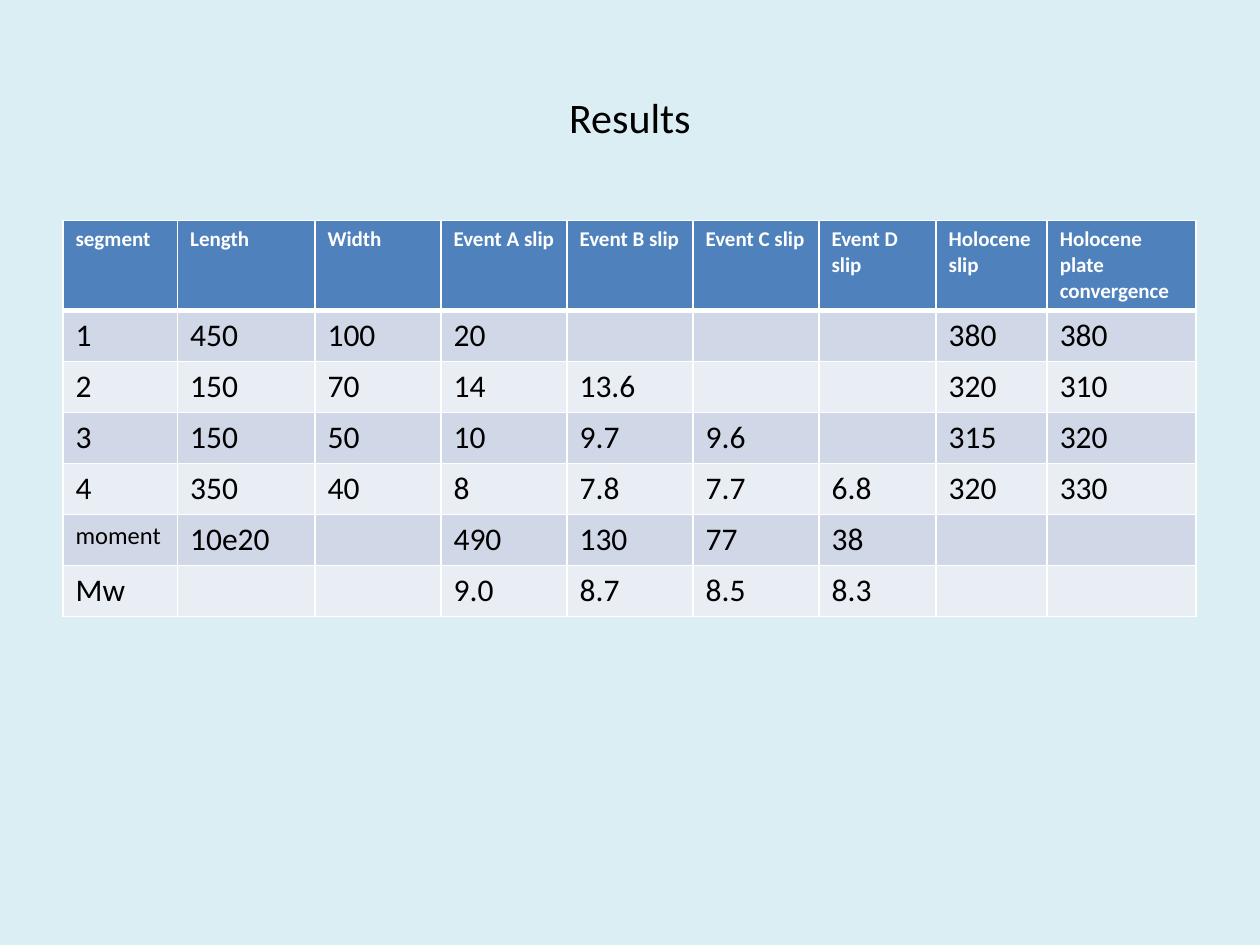
"""Build a slide with a table of slip results for each fault segment."""
import pptx
import pptx.dml.color
import pptx.enum.text
import pptx.oxml
import pptx.oxml.ns
import pptx.util

Cm = pptx.util.Cm
Pt = pptx.util.Pt
RGBColor = pptx.dml.color.RGBColor

PALE = RGBColor(0xDB, 0xEE, 0xF4)
BLUE = RGBColor(0x4F, 0x81, 0xBD)
BANDS = (RGBColor(0xD0, 0xD8, 0xE8), RGBColor(0xE9, 0xED, 0xF4))
WHITE = RGBColor(0xFF, 0xFF, 0xFF)
BLACK = RGBColor(0x00, 0x00, 0x00)

WIDTHS = (2.31, 2.77, 2.54, 2.54, 2.54, 2.54, 2.36, 2.24, 3)
HEAD = ("segment", "Length", "Width", "Event A slip", "Event B slip",
        "Event C slip", "Event D slip", "Holocene slip",
        "Holocene plate convergence")
ROWS = (
    ("1", "450", "100", "20", "", "", "", "380", "380"),
    ("2", "150", "70", "14", "13.6", "", "", "320", "310"),
    ("3", "150", "50", "10", "9.7", "9.6", "", "315", "320"),
    ("4", "350", "40", "8", "7.8", "7.7", "6.8", "320", "330"),
    ("moment", "10e20", "", "490", "130", "77", "38", "", ""),
    ("Mw", "", "", "9.0", "8.7", "8.5", "8.3", "", ""),
)


class Deck:
    """Hold the text style and the current slide."""

    def __init__(self, font):
        self.font = font
        self.file = pptx.Presentation()
        self.file.slide_width, self.file.slide_height = Cm(25.4), Cm(19.05)
        self.slide = self.file.slides.add_slide(self.file.slide_layouts[5])
        fill = self.slide.background.fill
        fill.solid()
        fill.fore_color.rgb = PALE

    def style(self, frame, size, color, bold=False):
        for para in frame.paragraphs:
            for run in para.runs:
                font = run.font
                font.name, font.size, font.bold = self.font, Pt(size), bold
                font.color.rgb = color

    def title(self, text, left, top, width, height):
        shape = self.slide.shapes.title
        shape.left, shape.top = Cm(left), Cm(top)
        shape.width, shape.height = Cm(width), Cm(height)
        frame = shape.text_frame
        frame.text = text
        frame.vertical_anchor = pptx.enum.text.MSO_ANCHOR.MIDDLE
        frame.paragraphs[0].alignment = pptx.enum.text.PP_ALIGN.CENTER
        self.style(frame, 24, BLACK)

    def border(self, cell, **sides):
        props = cell._tc.get_or_add_tcPr()
        for side, width in sides.items():
            props.append(pptx.oxml.parse_xml(
                f'<a:ln{side} {pptx.oxml.ns.nsdecls("a")} w="{Pt(width)}">'
                f'<a:solidFill><a:srgbClr val="{WHITE}"/></a:solidFill>'
                f'</a:ln{side}>'))

    def cell(self, cell, text, fill, size, color, bold, top, base):
        cell.text_frame.text = text
        self.style(cell.text_frame, size, color, bold)
        self.border(cell, L=1, R=1, T=top, B=base)
        cell.fill.solid()
        cell.fill.fore_color.rgb = fill

    def table(self, head, rows, left, top, widths, tall, row):
        high = tall + row * len(rows)
        grid = self.slide.shapes.add_table(
            len(rows) + 1, len(head), Cm(left), Cm(top),
            Cm(sum(widths)), Cm(high)).table
        for col, width in zip(grid.columns, widths):
            col.width = Cm(width)
        for num, line in enumerate(grid.rows):
            line.height = Cm(row if num else tall)
        for col, text in enumerate(head):
            self.cell(grid.cell(0, col), text, BLUE, 12, WHITE, True, 1, 3)
        for num, texts in enumerate(rows, 1):
            band = BANDS[(num - 1) % 2]
            edge = 3 if num == 1 else 1
            for col, text in enumerate(texts):
                size = 14 if text == "moment" else 18
                self.cell(grid.cell(num, col), text, band, size, BLACK,
                          False, edge, 1)


def main():
    deck = Deck("Calibri")
    deck.title("Results", 1.27, 0.76, 22.86, 3.18)
    deck.table(HEAD, ROWS, 1.27, 4.45, WIDTHS, 1.8, 1.03)
    deck.file.save("out.pptx")


if __name__ == "__main__":
    main()
